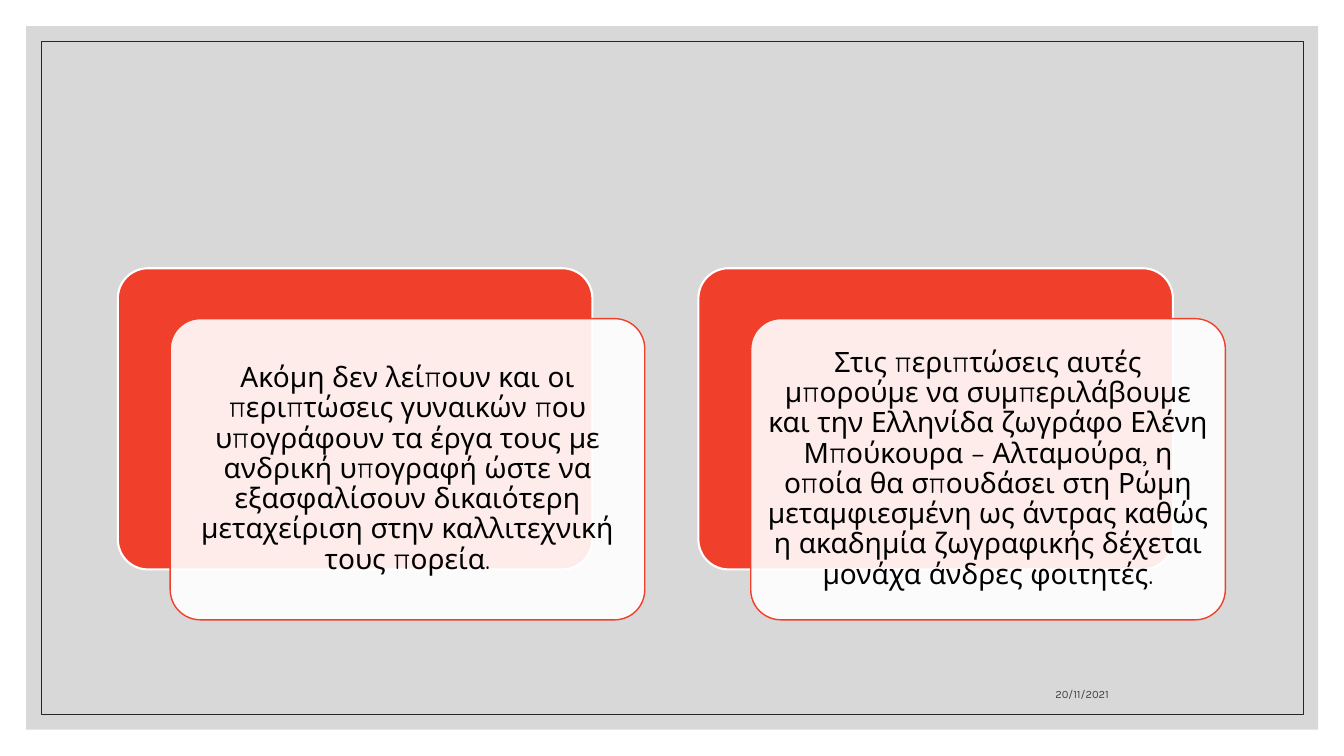
from pptx import Presentation
from pptx.dml.color import RGBColor as RGB
from pptx.enum.shapes import MSO_SHAPE as Shape
from pptx.enum.text import MSO_ANCHOR as Anchor, PP_ALIGN as Align
from pptx.oxml.xmlchemy import OxmlElement as Node
from pptx.util import Cm, Pt

RED = RGB(0xF0, 0x3F, 0x2B)
WHITE = RGB(0xFF, 0xFF, 0xFF)
BLACK = RGB(0, 0, 0)
GREY = RGB(0xBF, 0xBF, 0xBF)
DARK = RGB(0x26, 0x26, 0x26)
SOFT = RGB(0x40, 0x40, 0x40)

BODY = {"name": "Quicksand", "size": Pt(20)}
SMALL = {"name": "Karla", "size": Pt(8)}

CARDS = [
    "Ακόμη δεν λείπουν και οι περιπτώσεις γυναικών που υπογράφουν τα έργα "
    "τους με ανδρική υπογραφή ώστε να εξασφαλίσουν δικαιότερη μεταχείριση "
    "στην καλλιτεχνική τους πορεία.",
    "Στις περιπτώσεις αυτές μπορούμε να συμπεριλάβουμε και την Ελληνίδα "
    "ζωγράφο Ελένη Μπούκουρα – Αλταμούρα, η οποία θα σπουδάσει στη Ρώμη "
    "μεταμφιεσμένη ως άντρας καθώς η ακαδημία ζωγραφικής δέχεται μονάχα "
    "άνδρες φοιτητές.",
]


def add_box(slide, kind, box, fill=None, line=None, width=1, alpha=None):
    shape = slide.shapes.add_shape(kind, *map(Cm, box))
    shape.shadow.inherit = False
    if fill is None:
        shape.fill.background()
    else:
        shape.fill.solid()
        shape.fill.fore_color.rgb = fill
    if alpha is not None:
        node = Node("a:alpha")
        node.set("val", str(alpha * 1000))
        shape.fill._xPr.solidFill[0].append(node)
    if line is None:
        shape.line.fill.background()
    else:
        shape.line.color.rgb = line
        shape.line.width = Pt(width)
    return shape


def write(frame, text, look, color, align, anchor):
    frame.word_wrap = True
    frame.vertical_anchor = anchor
    para = frame.paragraphs[0]
    para.alignment = align
    run = para.add_run()
    run.text = text
    for key, value in look.items():
        setattr(run.font, key, value)
    run.font.color.rgb = color
    return para


def add_frame(slide, box):
    """Grey panel with a thin outline set inside it."""
    left, top, width, height = box
    gap = 0.38
    add_box(slide, Shape.RECTANGLE, box, GREY, alpha=60)
    inner = (left + gap, top + gap, width - 2 * gap, height - 2 * gap)
    add_box(slide, Shape.RECTANGLE, inner, line=DARK, width=0.5)


def add_card(slide, box, text):
    """Red card with a pale text card shifted over it."""
    left, top, width, height = box
    back = add_box(slide, Shape.ROUNDED_RECTANGLE, box, RED, WHITE, 1.5)
    front = add_box(slide, Shape.ROUNDED_RECTANGLE,
                    (left + 1.32, top + 1.27, width, height),
                    WHITE, RED, 1, alpha=90)
    for shape in (back, front):
        shape.adjustments[0] = 0.1
    frame = front.text_frame
    for side in ("left", "top", "right", "bottom"):
        setattr(frame, f"margin_{side}", Cm(0.2))
    para = write(frame, text, BODY, BLACK, Align.CENTER, Anchor.MIDDLE)
    para.line_spacing = 0.9


def add_date(slide, box, text):
    frame = slide.shapes.add_textbox(*map(Cm, box)).text_frame
    para = write(frame, text, SMALL, SOFT, Align.RIGHT, Anchor.BOTTOM)
    para.space_after = Pt(6)


def main():
    deck = Presentation()
    deck.slide_width, deck.slide_height = Cm(33.87), Cm(19.05)
    slide = deck.slides.add_slide(deck.slide_layouts[6])

    # Backdrop
    add_frame(slide, (0.66, 0.66, 32.56, 17.73))
    # Date
    add_date(slide, (20.17, 16.76, 8.03, 1.02), "20/11/2021")
    # Two cards at an equal step
    for i, text in enumerate(CARDS):
        add_card(slide, (2.97 + 14.63 * i, 6.76, 11.96, 7.59), text)

    deck.save("out.pptx")


if __name__ == "__main__":
    main()
